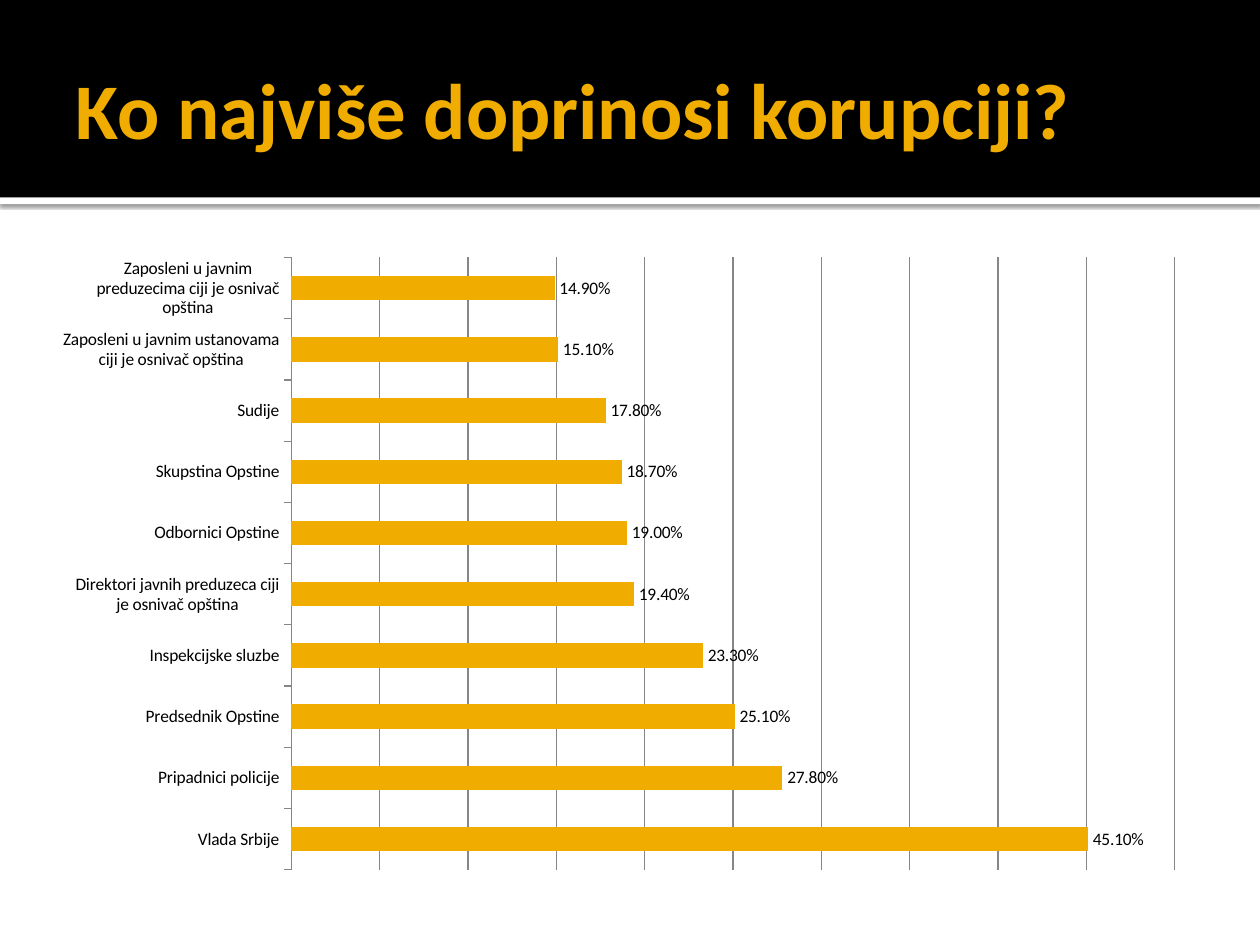
from dataclasses import dataclass

from lxml import etree
from pptx import Presentation
from pptx.chart.data import CategoryChartData
from pptx.dml.color import RGBColor
from pptx.enum.chart import XL_CHART_TYPE, XL_LABEL_POSITION, XL_TICK_MARK
from pptx.enum.shapes import MSO_SHAPE
from pptx.enum.text import MSO_ANCHOR, PP_ALIGN
from pptx.oxml.ns import qn
from pptx.util import Inches, Pt

BAR = XL_CHART_TYPE.BAR_CLUSTERED
OUT_END = XL_LABEL_POSITION.OUTSIDE_END
TICK_OUT = XL_TICK_MARK.OUTSIDE
RECT = MSO_SHAPE.RECTANGLE
MIDDLE = MSO_ANCHOR.MIDDLE
LEFT = PP_ALIGN.LEFT
TITLE_ONLY = 5
PERCENT = "0.00%"

ROWS = [
    ("Vlada Srbije", 0.451),
    ("Pripadnici policije", 0.278),
    ("Predsednik Opstine", 0.251),
    ("Inspekcijske sluzbe", 0.233),
    ("Direktori javnih preduzeca ciji je osnivač opština", 0.194),
    ("Odbornici Opstine", 0.19),
    ("Skupstina Opstine", 0.187),
    ("Sudije", 0.178),
    ("Zaposleni u javnim ustanovama ciji je osnivač opština", 0.151),
    ("Zaposleni u javnim preduzecima ciji je osnivač opština", 0.149),
]


@dataclass(frozen=True)
class Theme:
    """Colours, font and type sizes."""
    gold: RGBColor = RGBColor(0xF0, 0xAD, 0x00)
    black: RGBColor = RGBColor(0, 0, 0)
    white: RGBColor = RGBColor(0xFF, 0xFF, 0xFF)
    gray: RGBColor = RGBColor(0x86, 0x86, 0x86)
    font: str = "Calibri"
    head: Pt = Pt(45)
    small: Pt = Pt(10)
    hair: Pt = Pt(0.75)


class Deck:
    """Draws styled elements, with lengths as shares of the slide."""

    def __init__(self, theme):
        self.theme = theme
        self.prs = Presentation()
        self.prs.slide_width, self.prs.slide_height = Inches(10), Inches(7.5)
        self.slide = self.prs.slides.add_slide(self.prs.slide_layouts[TITLE_ONLY])

    def box(self, x, y, w, h):
        """Turn shares into slide lengths."""
        wide, high = self.prs.slide_width, self.prs.slide_height
        return int(x * wide), int(y * high), int(w * wide), int(h * high)

    def band(self, y, h, color):
        """Add a full-width band."""
        band = self.slide.shapes.add_shape(RECT, *self.box(0, y, 1, h))
        band.shadow.inherit = False
        band.fill.solid()
        band.fill.fore_color.rgb = color
        band.line.fill.background()
        return band

    def shade(self, shape):
        """Cast a soft shadow below a shape."""
        glow = shape._element.spPr.find(qn("a:effectLst"))
        cast = etree.SubElement(glow, qn("a:outerShdw"), blurRad=str(Pt(2.5)),
                                dist=str(Pt(0.8)), dir="5400000", algn="tl", rotWithShape="0")
        tint = etree.SubElement(cast, qn("a:srgbClr"), val=str(self.theme.black))
        etree.SubElement(tint, qn("a:alpha"), val="60000")

    def title(self, text, *area):
        """Fill the title placeholder and bring it to the front."""
        title = self.slide.shapes.title
        title.left, title.top, title.width, title.height = self.box(*area)
        self.slide.shapes._spTree.append(title._element)
        frame = title.text_frame
        frame.word_wrap = True
        frame.vertical_anchor = MIDDLE
        frame.margin_left = Inches(0.1)
        frame.margin_right = frame.margin_top = frame.margin_bottom = Inches(0.05)
        para = frame.paragraphs[0]
        para.alignment = LEFT
        run = para.add_run()
        run.text = text
        run.font.name, run.font.size, run.font.bold = self.theme.font, self.theme.head, True
        run.font.color.rgb = self.theme.gold

    def rule(self, line):
        """Style a chart line."""
        line.color.rgb = self.theme.gray
        line.width = self.theme.hair

    def bars(self, rows, *area):
        """Add a bar chart of shares."""
        data = CategoryChartData(number_format=PERCENT)
        data.categories = [name for name, _ in rows]
        data.add_series("Series 1", [share for _, share in rows])
        chart = self.slide.shapes.add_chart(BAR, *self.box(*area), data).chart
        chart.has_legend = chart.has_title = False
        chart.font.name, chart.font.size = self.theme.font, self.theme.small
        chart.font.color.rgb = self.theme.black

        cats, vals = chart.category_axis, chart.value_axis
        cats.major_tick_mark = TICK_OUT
        self.rule(cats.format.line)
        vals.visible = False
        vals.minimum_scale, vals.maximum_scale, vals.major_unit = 0, 0.5, 0.05
        vals.tick_labels.number_format = PERCENT
        vals.tick_labels.number_format_is_linked = False
        vals.has_major_gridlines = True
        self.rule(vals.major_gridlines.format.line)

        plot = chart.plots[0]
        plot.gap_width = 150
        plot.vary_by_categories = False
        fill = plot.series[0].format.fill
        fill.solid()
        fill.fore_color.rgb = self.theme.gold
        plot.has_data_labels = True
        tags = plot.data_labels
        tags.show_value = True
        tags.position = OUT_END
        tags.number_format, tags.number_format_is_linked = PERCENT, False


def main():
    """Build and save the slide."""
    theme = Theme()
    deck = Deck(theme)
    deck.shade(deck.band(0.209, 0.007, theme.white))
    deck.band(0, 0.209, theme.black)
    deck.title("Ko najviše doprinosi korupciji?", 0.05, 0.023, 0.9, 0.183)
    deck.bars(ROWS, 0.05, 0.259, 0.9, 0.675)
    deck.prs.save("out.pptx")


if __name__ == "__main__":
    main()
